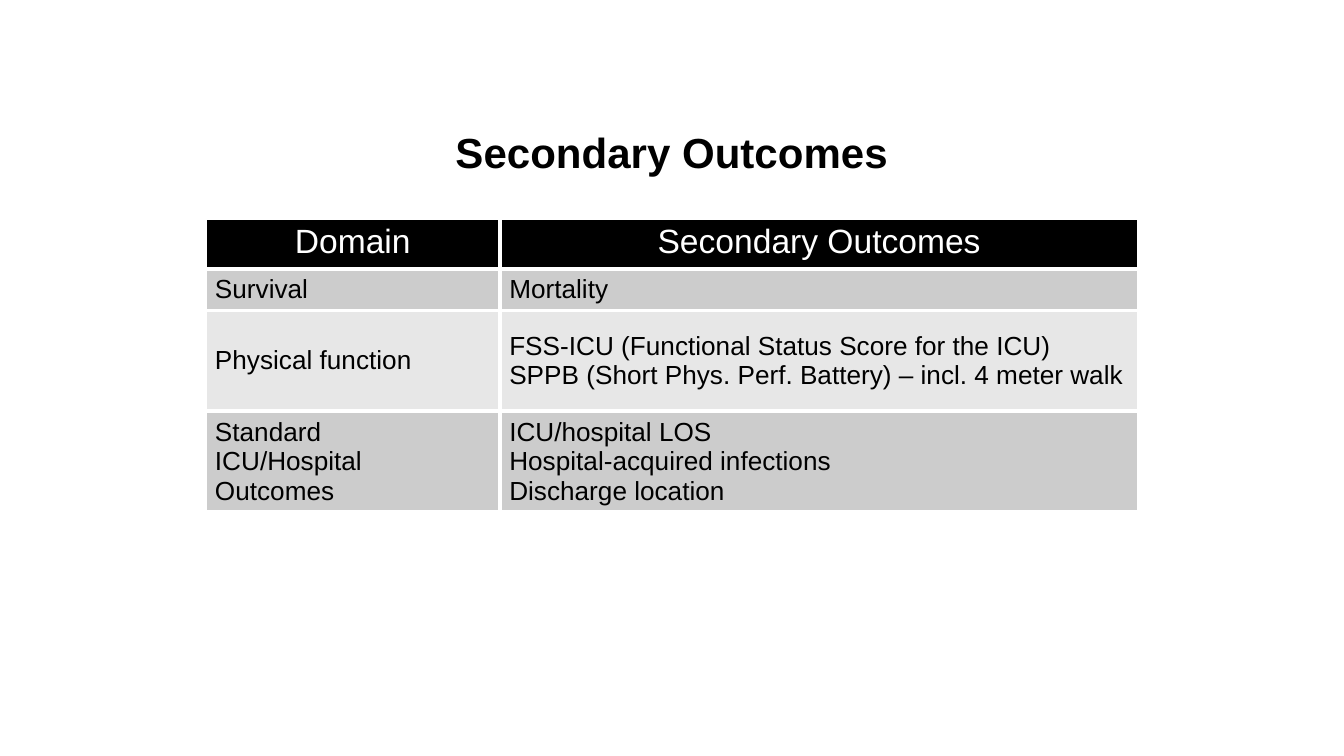
from lxml.etree import SubElement
from pptx import Presentation
from pptx.dml.color import RGBColor
from pptx.enum.text import MSO_ANCHOR, PP_ALIGN
from pptx.oxml.ns import qn
from pptx.util import Inches, Pt

TITLE = "Secondary Outcomes"
HEADER = ("Domain", "Secondary Outcomes")
# Each cell is a list of paragraphs; \v is a line break within one.
OUTCOMES = [
    (["Survival"], ["Mortality"]),
    (["Physical function"],
     ["FSS-ICU (Functional Status Score for the ICU)",
      "SPPB (Short Phys. Perf. Battery) – incl. 4 meter walk"]),
    (["Standard", "ICU/Hospital\vOutcomes"],
     ["ICU/hospital LOS", "Hospital-acquired infections", "Discharge location"]),
]
COLUMN_WIDTHS = (2.19, 4.75)
ROW_HEIGHTS = (0.38, 0.31, 0.75, 0.75)
BLACK, WHITE = "000000", "FFFFFF"
BANDS = ("CCCCCC", "E7E7E7")


def color(value):
    return RGBColor.from_string(value)


def write(frame, lines, size, ink=BLACK, bold=False, align=PP_ALIGN.LEFT, spacing=None):
    for index, line in enumerate(lines):
        para = frame.add_paragraph() if index else frame.paragraphs[0]
        para.text = line
        para.alignment = align
        para.line_spacing = spacing
        for span in para.runs:
            span.font.name = "Arial"
            span.font.size = Pt(size)
            span.font.bold = bold
            span.font.color.rgb = color(ink)


def style_cell(cell, fill, anchor):
    """Set margins, white borders and fill; borders must precede the fill in the XML."""
    cell.margin_left = cell.margin_right = Inches(0.07)
    cell.margin_top = cell.margin_bottom = Inches(0.04)
    cell.vertical_anchor = anchor
    properties = cell._tc.get_or_add_tcPr()
    for side in ("a:lnL", "a:lnR", "a:lnT", "a:lnB"):
        border = SubElement(properties, qn(side), w=str(Pt(2.25)))
        paint = SubElement(border, qn("a:solidFill"))
        SubElement(paint, qn("a:srgbClr"), val=WHITE)
    cell.fill.solid()
    cell.fill.fore_color.rgb = color(fill)


def add_title(slide):
    title = slide.shapes.title
    title.left, title.top = Inches(1.62), Inches(0.68)
    title.width, title.height = Inches(6.76), Inches(0.94)
    title.text_frame.vertical_anchor = MSO_ANCHOR.MIDDLE
    write(title.text_frame, [TITLE], 22.5, bold=True, align=PP_ALIGN.CENTER, spacing=0.9)


def add_outcomes_table(slide):
    table = slide.shapes.add_table(
        len(ROW_HEIGHTS), len(COLUMN_WIDTHS), Inches(1.53), Inches(1.62),
        Inches(sum(COLUMN_WIDTHS)), Inches(sum(ROW_HEIGHTS))).table
    for column, width in zip(table.columns, COLUMN_WIDTHS):
        column.width = Inches(width)
    for row, height in zip(table.rows, ROW_HEIGHTS):
        row.height = Inches(height)

    for cell, heading in zip(table.rows[0].cells, HEADER):
        style_cell(cell, BLACK, MSO_ANCHOR.TOP)
        write(cell.text_frame, [heading], 18, ink=WHITE, align=PP_ALIGN.CENTER)
    for index, entries in enumerate(OUTCOMES):
        for cell, lines in zip(table.rows[index + 1].cells, entries):
            style_cell(cell, BANDS[index % 2], MSO_ANCHOR.MIDDLE)
            write(cell.text_frame, lines, 14)


def main():
    deck = Presentation()
    deck.slide_width = Inches(10)
    deck.slide_height = deck.slide_width * 9 // 16
    slide = deck.slides.add_slide(deck.slide_layouts[5])
    add_outcomes_table(slide)
    add_title(slide)
    deck.save("out.pptx")


if __name__ == "__main__":
    main()
